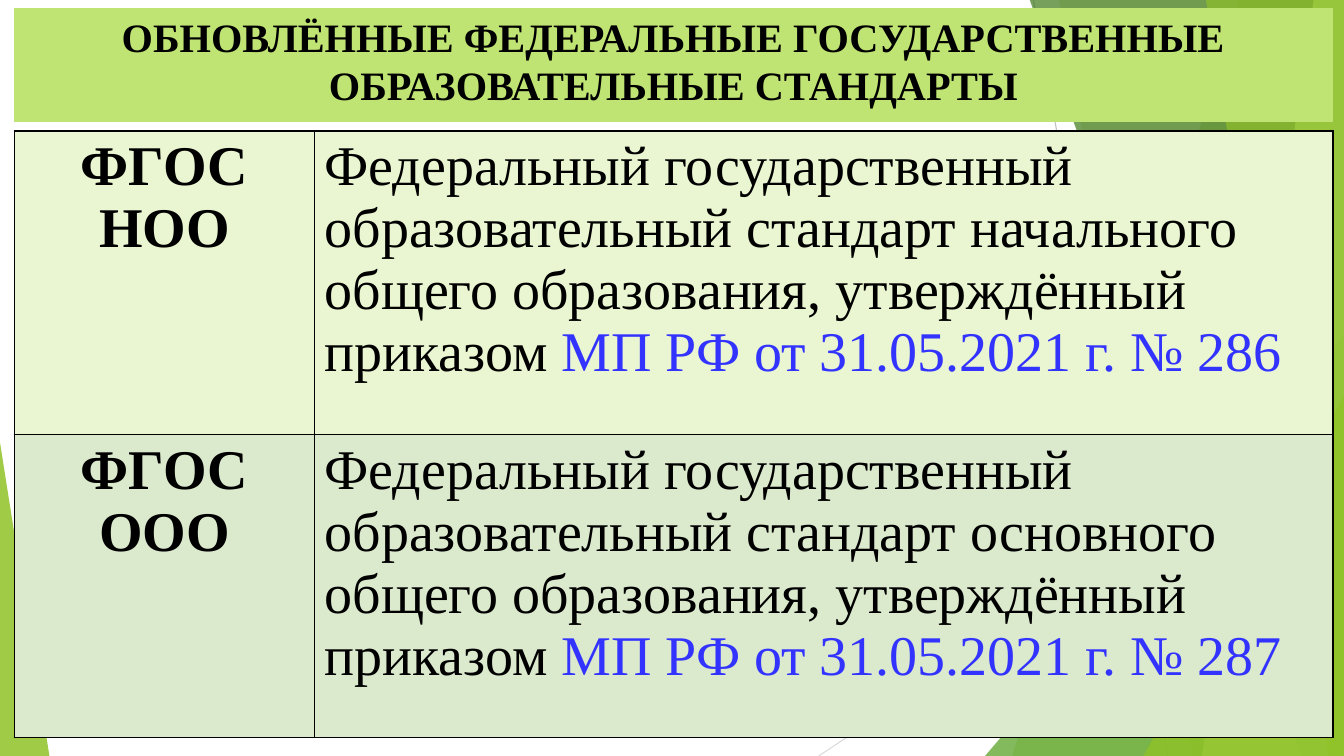
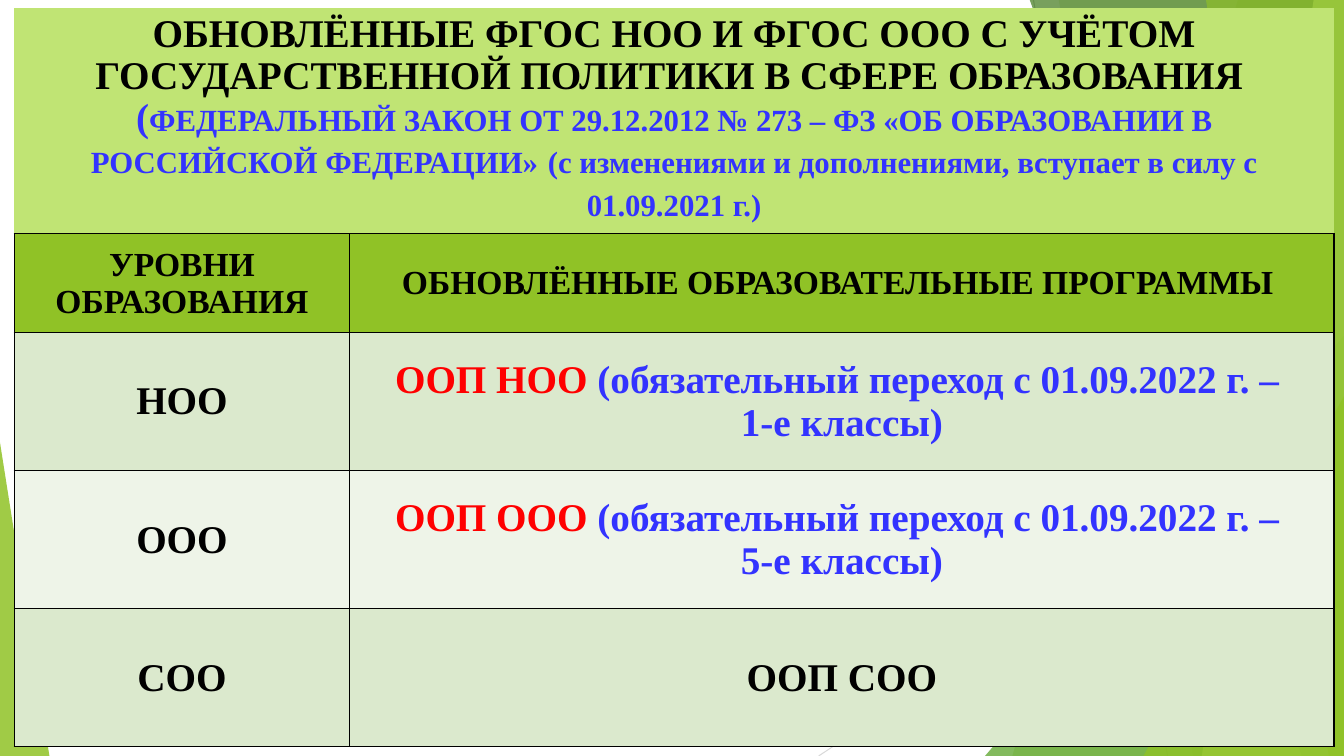
from dataclasses import dataclass

from lxml import etree
from pptx import Presentation
from pptx.dml.color import RGBColor
from pptx.enum.shapes import MSO_CONNECTOR, MSO_SHAPE
from pptx.enum.text import MSO_ANCHOR, MSO_AUTO_SIZE, PP_ALIGN
from pptx.oxml.ns import qn
from pptx.slide import Slide, SlideLayout
from pptx.util import Inches, Pt

STRAIGHT = MSO_CONNECTOR.STRAIGHT
TRIANGLE = MSO_SHAPE.ISOSCELES_TRIANGLE
TOP, MIDDLE = MSO_ANCHOR.TOP, MSO_ANCHOR.MIDDLE
LEFT, CENTER = PP_ALIGN.LEFT, PP_ALIGN.CENTER
NO_FIT = MSO_AUTO_SIZE.NONE

BLACK = RGBColor(0x00, 0x00, 0x00)
BLUE = RGBColor(0x33, 0x33, 0xFF)
RED = RGBColor(0xFF, 0x00, 0x00)
GREEN = RGBColor(0x90, 0xC2, 0x26)
LEAF = RGBColor(0x54, 0xA0, 0x21)
MOSS = RGBColor(0x3F, 0x78, 0x19)
LIME = RGBColor(0xC0, 0xE4, 0x74)
PALE = RGBColor(0xEA, 0xF6, 0xD1)
SAGE = RGBColor(0xDB, 0xE9, 0xCD)
MIST = RGBColor(0xEE, 0xF4, 0xE8)
GREY = RGBColor(0xBF, 0xBF, 0xBF)
SILVER = RGBColor(0xD9, 0xD9, 0xD9)

FONT = "Times New Roman"
WIDE, HIGH = 13.33, 7.5
EDGE = 0.14


@dataclass
class Ray:
    """A thin line across the backdrop."""
    start: tuple[float, float]
    end: tuple[float, float]
    color: RGBColor


@dataclass
class Band:
    """A slanted band reaching the right edge of the slide."""
    top: float
    base: float
    color: RGBColor
    alpha: int


@dataclass
class Wedge:
    """A right triangle standing on the bottom edge of the slide."""
    left: float
    top: float
    width: float
    tip: float
    color: RGBColor
    alpha: int


@dataclass
class Span:
    """A stretch of text with its own colour or size."""
    text: str
    color: RGBColor = BLACK
    size: float | None = None
    split: bool = False


@dataclass
class Cell:
    """The paragraphs of one table cell and their look."""
    lines: list[list[Span]]
    size: float
    bold: bool = True
    align: PP_ALIGN = CENTER


@dataclass
class Row:
    """One table row."""
    height: float
    fill: RGBColor
    cells: list[Cell]


DECOR = [
    Ray((10.25, 0), (11.58, HIGH), GREY),
    Ray((WIDE, 4.03), (8.12, HIGH), SILVER),
    Band(12.28, 10.04, GREEN, 30),
    Band(10.5, 11.83, GREEN, 20),
    Wedge(9.77, 3.33, 3.56, 1, LEAF, 72),
    Band(10.21, 12.91, MOSS, 70),
    Band(13.03, 11.92, LIME, 70),
    Band(11.96, 13.18, GREEN, 65),
    Wedge(11.34, 3.93, 1.99, 1, GREEN, 80),
    Wedge(0, 4.39, 0.49, 0, GREEN, 85),
]


def add_ray(slide: Slide, ray: Ray) -> None:
    """Draw a thin line without a shadow."""
    ends = [Inches(v) for v in (*ray.start, *ray.end)]
    line = slide.shapes.add_connector(STRAIGHT, *ends)
    line.line.color.rgb = ray.color
    line.line.width = Pt(0.75)
    etree.SubElement(line.element.spPr, qn("a:effectLst"))


def add_pane(slide: Slide, item: Band | Wedge) -> None:
    """Draw a band or wedge with a see-through fill."""
    if isinstance(item, Band):
        pen = slide.shapes.build_freeform(Inches(item.top), Inches(-0.01))
        points = [(WIDE, -0.01), (WIDE, HIGH), (item.base, HIGH)]
        pen.add_line_segments([(Inches(x), Inches(y)) for x, y in points])
        pane = pen.convert_to_shape()
    else:
        pane = slide.shapes.add_shape(
            TRIANGLE, Inches(item.left), Inches(item.top),
            Inches(item.width), Inches(HIGH - item.top))
        pane.adjustments[0] = item.tip
    pane.shadow.inherit = False
    pane.line.fill.background()
    pane.fill.solid()
    pane.fill.fore_color.rgb = item.color
    tint = pane.element.spPr.find(qn("a:solidFill"))[0]
    etree.SubElement(tint, qn("a:alpha"), val=str(item.alpha * 1000))


def add_decor(slide: Slide, layout: SlideLayout) -> None:
    """Draw the backdrop and hand it over to the shared layout."""
    first = len(slide.shapes)
    for item in DECOR:
        if isinstance(item, Ray):
            add_ray(slide, item)
        else:
            add_pane(slide, item)
    for number, shape in enumerate(list(slide.shapes)[first:], 100):
        shape.element.xpath(".//p:cNvPr")[0].set("id", str(number))
        layout.shapes.element.append(shape.element)


def write(para, spans: list[Span], size: float, bold: bool, align: PP_ALIGN) -> None:
    """Fill a paragraph with spans."""
    para.alignment = align
    font = para.font
    font.name, font.size, font.bold = FONT, Pt(size), bold
    same = len({span.color for span in spans}) == 1
    if same:
        font.color.rgb = spans[0].color
    for span in spans:
        run = para.add_run()
        run.text = span.text
        if not same:
            run.font.color.rgb = span.color
        if span.size:
            run.font.size = Pt(span.size)
        if span.split:
            para.add_line_break()


def set_title(slide: Slide, width: float, height: float,
              spans: list[Span], size: float, pitch: float) -> None:
    """Place and fill the title band."""
    title = slide.shapes.title
    title.left, title.top = Inches(EDGE), Inches(0.08)
    title.width, title.height = Inches(width), Inches(height)
    title.fill.solid()
    title.fill.fore_color.rgb = LIME
    frame = title.text_frame
    frame.auto_size, frame.vertical_anchor, frame.word_wrap = NO_FIT, TOP, True
    para = frame.paragraphs[0]
    para.line_spacing = Pt(pitch)
    write(para, spans, size, True, CENTER)


def set_cell(cell, data: Cell, fill: RGBColor, anchor: MSO_ANCHOR) -> None:
    """Fill, frame and write one table cell."""
    cell.vertical_anchor = anchor
    for side in ("lnL", "lnR", "lnT", "lnB"):
        edge = etree.SubElement(cell._tc.tcPr, qn(f"a:{side}"), w=str(Pt(1)))
        solid = etree.SubElement(edge, qn("a:solidFill"))
        etree.SubElement(solid, qn("a:srgbClr"), val=str(BLACK))
    cell.fill.solid()
    cell.fill.fore_color.rgb = fill
    frame = cell.text_frame
    for number, spans in enumerate(data.lines):
        para = frame.add_paragraph() if number else frame.paragraphs[0]
        write(para, spans, data.size, data.bold, data.align)


def add_grid(slide: Slide, top: float, widths: list[float],
             rows: list[Row], anchor: MSO_ANCHOR) -> None:
    """Draw a table from its rows."""
    grid = slide.shapes.add_table(
        len(rows), len(widths), Inches(EDGE), Inches(top),
        Inches(sum(widths)), Inches(sum(row.height for row in rows))).table
    grid.horz_banding = False
    for col, width in zip(grid.columns, widths):
        col.width = Inches(width)
    for y, row in enumerate(rows):
        grid.rows[y].height = Inches(row.height)
        for x, data in enumerate(row.cells):
            set_cell(grid.cell(y, x), data, row.fill, anchor)


def norm_row(name: str, level: str, order: str, fill: RGBColor) -> Row:
    """Build the row of one federal standard."""
    text = (f"Федеральный государственный образовательный стандарт {level} "
            "общего образования, утверждённый приказом ")
    spans = [Span(text), Span(f"МП РФ от 31.05.2021 г. № {order}", BLUE)]
    return Row(3.01, fill, [Cell([[Span(f"ФГОС {name}")]], 40),
                            Cell([spans], 40, False, LEFT)])


def plan_row(name: str, grade: str, fill: RGBColor) -> Row:
    """Build the row of one school level."""
    if grade:
        lines = [[Span(f"ООП {name} ", RED),
                  Span("(обязательный переход с 01.09.2022 г. – ", BLUE)],
                 [Span(f"{grade}-е классы)", BLUE)]]
    else:
        lines = [[Span(f"ООП {name}")]]
    return Row(1.37, fill, [Cell([[Span(name)]], 28), Cell(lines, 28)])


def norm_slide(slide: Slide) -> None:
    """Show the updated standards."""
    set_title(slide, 13.08, 1.13, [Span(
        "ОБНОВЛЁННЫЕ ФЕДЕРАЛЬНЫЕ ГОСУДАРСТВЕННЫЕ ОБРАЗОВАТЕЛЬНЫЕ СТАНДАРТЫ")],
        28.8, 34)
    add_grid(slide, 1.3, [2.98, 10.1], [
        norm_row("НОО", "начального", "286", PALE),
        norm_row("ООО", "основного", "287", SAGE)], TOP)


def plan_slide(slide: Slide) -> None:
    """Show the updated programmes by school level."""
    set_title(slide, 13.09, 2.24, [
        Span("ОБНОВЛЁННЫЕ ФГОС НОО И ФГОС ООО С УЧЁТОМ "
             "ГОСУДАРСТВЕННОЙ ПОЛИТИКИ В СФЕРЕ ОБРАЗОВАНИЯ ", split=True),
        Span("(", BLUE),
        Span("ФЕДЕРАЛЬНЫЙ ЗАКОН ОТ 29.12.2012 № 273 – ФЗ "
             "«ОБ ОБРАЗОВАНИИ В РОССИЙСКОЙ ФЕДЕРАЦИИ»", BLUE, 22),
        Span(" ", BLUE),
        Span("(с изменениями и дополнениями, вступает в силу с 01.09.2021 г.)",
             BLUE, 22)], 28, 30)
    heads = ["УРОВНИ ОБРАЗОВАНИЯ", "ОБНОВЛЁННЫЕ ОБРАЗОВАТЕЛЬНЫЕ ПРОГРАММЫ "]
    add_grid(slide, 2.32, [3.33, 9.76], [
        Row(0.98, GREEN, [Cell([[Span(head)]], 24) for head in heads]),
        plan_row("НОО", "1", SAGE),
        plan_row("ООО", "5", MIST),
        plan_row("СОО", "", SAGE)], MIDDLE)


def main() -> None:
    """Build and save the deck."""
    deck = Presentation()
    deck.slide_width, deck.slide_height = Inches(WIDE), Inches(HIGH)
    layout = deck.slide_layouts[5]
    first, second = [deck.slides.add_slide(layout) for _ in range(2)]
    add_decor(first, layout)
    norm_slide(first)
    plan_slide(second)
    deck.save("out.pptx")


if __name__ == "__main__":
    main()
